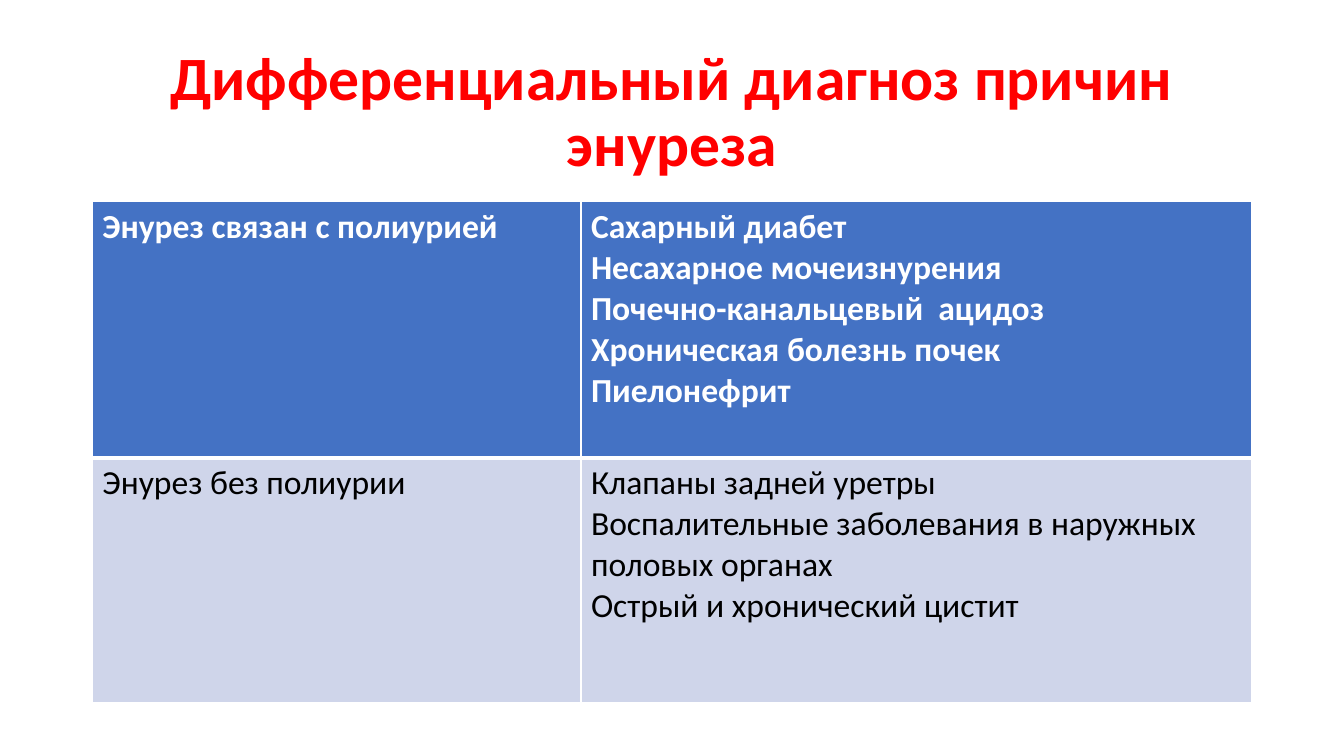
"""Build a slide with a table of the differential diagnosis of enuresis causes."""
from dataclasses import dataclass

import pptx
import pptx.dml.color
import pptx.enum.text
import pptx.oxml
import pptx.oxml.ns
import pptx.presentation
import pptx.slide
import pptx.table
import pptx.text.text
import pptx.util

Pt = pptx.util.Pt
RGBColor = pptx.dml.color.RGBColor

RED = RGBColor(0xFF, 0x00, 0x00)
WHITE = RGBColor(0xFF, 0xFF, 0xFF)
BLACK = RGBColor(0x00, 0x00, 0x00)
BLUE = RGBColor(0x44, 0x72, 0xC4)
PALE_BLUE = RGBColor(0xCF, 0xD5, 0xEA)

FONT_NAME = "Calibri"
LEFT = Pt(66)
WIDTH = Pt(828)
TABLE_TOP = Pt(144)
COLUMN_WIDTHS = (Pt(349), Pt(479))


@dataclass(frozen=True)
class DiagnosisRow:
    form: str
    causes: tuple[str, ...]
    height: pptx.util.Length
    fill: RGBColor
    color: RGBColor
    bold: bool
    top_border: pptx.util.Length
    bottom_border: pptx.util.Length


ROWS = (
    DiagnosisRow(
        "Энурез связан с полиурией",
        (
            "Сахарный диабет",
            "Несахарное мочеизнурения",
            "Почечно-канальцевый  ацидоз",
            "Хроническая болезнь почек",
            "Пиелонефрит",
        ),
        Pt(183), BLUE, WHITE, True, Pt(1), Pt(3),
    ),
    DiagnosisRow(
        "Энурез без полиурии",
        (
            "Клапаны задней уретры",
            "Воспалительные заболевания в наружных половых органах",
            "Острый и хронический цистит",
        ),
        Pt(175), PALE_BLUE, BLACK, False, Pt(3), Pt(1),
    ),
)


def format_runs(text_frame: pptx.text.text.TextFrame, size: float, color: RGBColor, bold: bool) -> None:
    for paragraph in text_frame.paragraphs:
        for run in paragraph.runs:
            run.font.name = FONT_NAME
            run.font.size = Pt(size)
            run.font.bold = bold
            run.font.color.rgb = color


def add_title(slide: pptx.slide.Slide, text: str) -> None:
    title = slide.shapes.title
    title.left, title.top, title.width, title.height = LEFT, Pt(29), WIDTH, Pt(104)
    text_frame = title.text_frame
    text_frame.text = text
    text_frame.word_wrap = True
    text_frame.auto_size = pptx.enum.text.MSO_AUTO_SIZE.NONE
    text_frame.vertical_anchor = pptx.enum.text.MSO_ANCHOR.MIDDLE
    paragraph = text_frame.paragraphs[0]
    paragraph.alignment = pptx.enum.text.PP_ALIGN.CENTER
    paragraph.line_spacing = 0.9
    format_runs(text_frame, 44, RED, True)


def add_borders(cell: pptx.table._Cell, row: DiagnosisRow) -> None:
    properties = cell._tc.get_or_add_tcPr()
    namespace = pptx.oxml.ns.nsdecls("a")
    widths = {"lnL": Pt(1), "lnR": Pt(1), "lnT": row.top_border, "lnB": row.bottom_border}
    for side, width in widths.items():
        properties.append(pptx.oxml.parse_xml(
            f'<a:{side} {namespace} w="{int(width)}"><a:solidFill>'
            f'<a:srgbClr val="{WHITE}"/></a:solidFill></a:{side}>'
        ))


def fill_cell(cell: pptx.table._Cell, lines: tuple[str, ...], row: DiagnosisRow) -> None:
    cell.text_frame.text = "\n".join(lines)
    format_runs(cell.text_frame, 24, row.color, row.bold)
    add_borders(cell, row)
    cell.fill.solid()
    cell.fill.fore_color.rgb = row.fill


def add_diagnosis_table(slide: pptx.slide.Slide, rows: tuple[DiagnosisRow, ...]) -> None:
    height = sum(row.height for row in rows)
    table = slide.shapes.add_table(
        len(rows), len(COLUMN_WIDTHS), LEFT, TABLE_TOP, WIDTH, height
    ).table
    for column, width in zip(table.columns, COLUMN_WIDTHS):
        column.width = width
    for table_row, row in zip(table.rows, rows):
        table_row.height = row.height
        for cell, lines in zip(table_row.cells, ((row.form,), row.causes)):
            fill_cell(cell, lines, row)


def main() -> None:
    presentation = pptx.Presentation()
    presentation.slide_width = Pt(960)
    presentation.slide_height = Pt(540)
    slide = presentation.slides.add_slide(presentation.slide_layouts.get_by_name("Title Only"))
    add_title(slide, "Дифференциальный диагноз причин энуреза")
    add_diagnosis_table(slide, ROWS)
    presentation.save("out.pptx")


if __name__ == "__main__":
    main()
